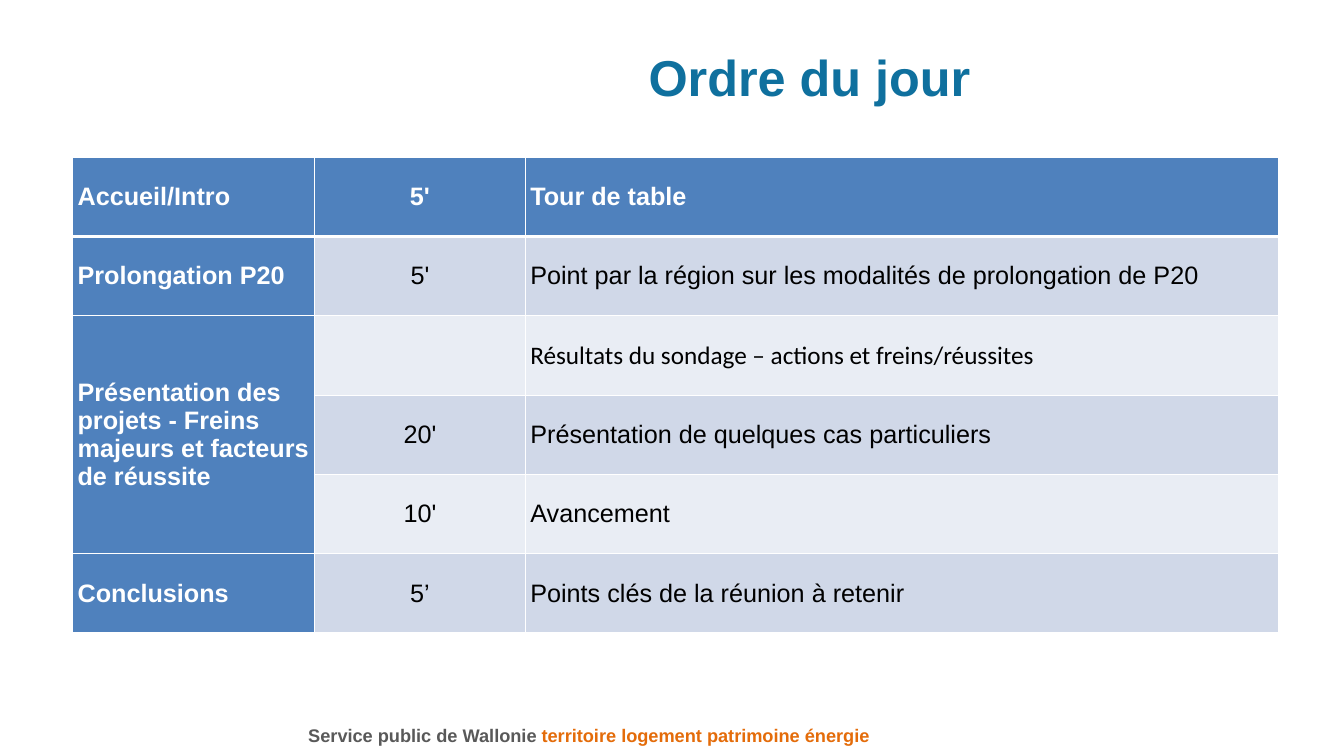
from lxml.etree import SubElement
from pptx import Presentation
from pptx.dml.color import RGBColor as RGB
from pptx.enum.text import MSO_ANCHOR as ANCHOR, MSO_AUTO_SIZE as AUTO, PP_ALIGN as ALIGN
from pptx.oxml.ns import qn
from pptx.util import Inches, Pt

TITLE = "Ordre du jour"
FOOTER = [("Service public de Wallonie ", "grey"),
          ("territoire logement patrimoine énergie", "orange")]
AGENDA = [
    ("Accueil/Intro", "5'", "Tour de table"),
    ("Prolongation P20", "5'", "Point par la région sur les modalités de prolongation de P20"),
    ("Présentation des projets - Freins majeurs et facteurs de réussite", "",
     "Résultats du sondage – actions et freins/réussites"),
    ("", "20'", "Présentation de quelques cas particuliers"),
    ("", "10'", "Avancement"),
    ("Conclusions", "5’", "Points clés de la réunion à retenir"),
]
PROJECT_ROWS = (2, 4)
SURVEY_CELL = (2, 2)
COL_WIDTHS = (2.4, 2.09, 7.47)

THEME = {
    "font": "Arial", "survey_font": "Calibri",
    "title_size": 36, "table_size": 18, "footer_size": 13,
    "title": "0F709E", "grey": "595959", "orange": "E46C0A",
    "white": "FFFFFF", "black": "000000",
    "header": "4F81BD", "bands": ("E9EDF4", "D0D8E8"),
    "border": 1, "header_border": 3,
}


def write(tf, runs, *, size, bold=True, font=THEME["font"], align=ALIGN.LEFT):
    p = tf.paragraphs[0]
    p.alignment = align
    for text, color in runs:
        r = p.add_run()
        r.text = text
        r.font.name, r.font.size, r.font.bold = font, Pt(size), bold
        r.font.color.rgb = RGB.from_string(THEME[color])


def add_text(slide, box, runs, *, anchor=ANCHOR.TOP, grow=False, **fmt):
    tf = slide.shapes.add_textbox(*map(Inches, box)).text_frame
    tf.word_wrap = True
    tf.vertical_anchor = anchor
    if grow:
        tf.auto_size = AUTO.SHAPE_TO_FIT_TEXT
    write(tf, runs, **fmt)


def set_borders(cell, **widths):
    tc_pr = cell._tc.get_or_add_tcPr()
    for side in "LRTB":
        width = widths.get(side, THEME["border"])
        ln = SubElement(tc_pr, qn(f"a:ln{side}"), w=str(Pt(width)))
        fill = SubElement(ln, qn("a:solidFill"))
        SubElement(fill, qn("a:srgbClr"), val=THEME["white"])


def add_agenda(slide):
    box = (0.72, 1.56, sum(COL_WIDTHS), 4.72)
    table = slide.shapes.add_table(len(AGENDA), len(COL_WIDTHS), *map(Inches, box)).table
    for column, width in zip(table.columns, COL_WIDTHS):
        column.width = Inches(width)
    first, last = PROJECT_ROWS
    table.cell(first, 0).merge(table.cell(last, 0))

    for i, row in enumerate(AGENDA):
        for j, text in enumerate(row):
            cell = table.cell(i, j)
            strong = i == 0 or j == 0
            cell.margin_left = cell.margin_right = Inches(0.05)
            cell.margin_top = cell.margin_bottom = 0
            cell.vertical_anchor = ANCHOR.MIDDLE
            thick = {0: "B", 1: "T"}.get(i)
            set_borders(cell, **({thick: THEME["header_border"]} if thick else {}))
            cell.fill.solid()
            cell.fill.fore_color.rgb = RGB.from_string(
                THEME["header"] if strong else THEME["bands"][i % 2])
            if text:
                write(cell.text_frame, [(text, "white" if strong else "black")],
                      size=THEME["table_size"], bold=strong,
                      font=THEME["survey_font" if (i, j) == SURVEY_CELL else "font"],
                      align=ALIGN.CENTER if j == 1 else ALIGN.LEFT)


def main():
    prs = Presentation()
    prs.slide_width, prs.slide_height = Inches(13.33), Inches(7.5)
    s = prs.slides.add_slide(prs.slide_layouts[6])
    add_text(s, (2.57, 7.14, 6.15, 0.32), FOOTER, grow=True,
             size=THEME["footer_size"], align=ALIGN.RIGHT)
    add_agenda(s)
    add_text(s, (2.73, 0.13, 10.6, 1.25), [(TITLE, "title")], anchor=ANCHOR.MIDDLE,
             size=THEME["title_size"], align=ALIGN.CENTER)
    prs.save("out.pptx")


if __name__ == "__main__":
    main()
